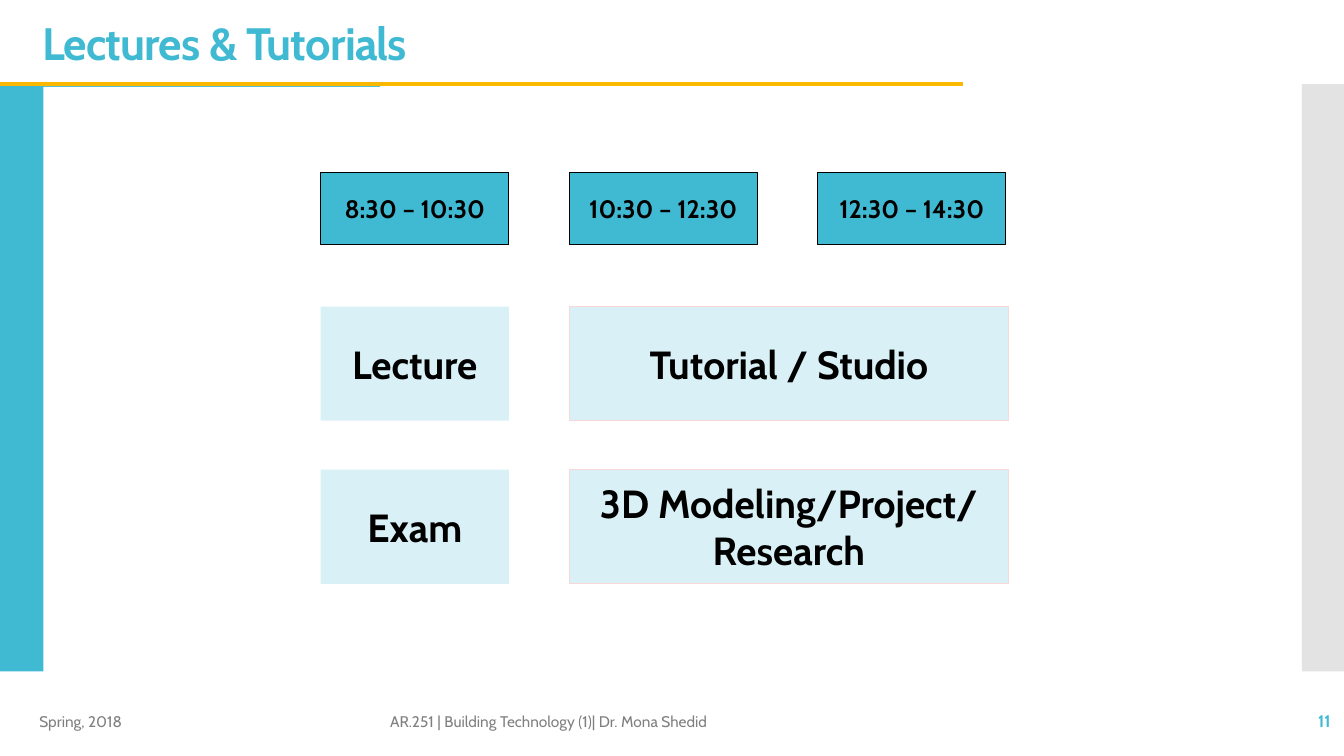
from lxml.etree import SubElement
from pptx import Presentation
from pptx.dml.color import RGBColor
from pptx.enum.shapes import MSO_CONNECTOR, MSO_SHAPE
from pptx.enum.text import MSO_ANCHOR, PP_ALIGN
from pptx.oxml.ns import qn
from pptx.util import Pt

TEAL = RGBColor(0x40, 0xBA, 0xD2)
PALE = RGBColor(0xD9, 0xF1, 0xF6)
PINK = RGBColor(0xF7, 0xD7, 0xD8)
GOLD = RGBColor(0xFA, 0xB9, 0x00)
SILVER = RGBColor(0xC8, 0xC8, 0xC8)
GREY = RGBColor(0x80, 0x80, 0x80)
BLACK = RGBColor(0, 0, 0)
WHITE = RGBColor(0xFF, 0xFF, 0xFF)

LEFT, PITCH = 229, 177.5
SLIM, WIDE = 134.5, 314
TIMES = ["8:30 – 10:30", "10:30 – 12:30", "12:30 – 14:30"]
ROWS = [
    (219, "Lecture", "Tutorial / Studio"),
    (335.5, "Exam", "3D Modeling/Project/ Research"),
]


def write(shape, text, size, color, bold=True, align=PP_ALIGN.LEFT, wrap=True):
    frame = shape.text_frame
    frame.text = text
    frame.word_wrap = wrap
    frame.vertical_anchor = MSO_ANCHOR.MIDDLE
    para = frame.paragraphs[0]
    para.alignment = align
    font = para.runs[0].font
    font.name = "Cabin"
    font.size = Pt(size)
    font.bold = bold
    font.color.rgb = color
    return para


def add_box(slide, x, y, w, h, fill, edge=None):
    box = slide.shapes.add_shape(MSO_SHAPE.RECTANGLE, Pt(x), Pt(y), Pt(w), Pt(h))
    box.shadow.inherit = False
    box.fill.solid()
    box.fill.fore_color.rgb = fill
    if edge is None:
        box.line.fill.background()
    else:
        box.line.color.rgb = edge
        box.line.width = Pt(0.75)
    return box


def add_label(slide, x, y, w, h, text, size, color, **style):
    label = slide.shapes.add_textbox(Pt(x), Pt(y), Pt(w), Pt(h))
    return write(label, text, size, color, **style)


def add_rule(slide, y, end):
    rule = slide.shapes.add_connector(MSO_CONNECTOR.STRAIGHT, 0, Pt(y), Pt(end), Pt(y))
    rule.line.color.rgb = GOLD
    rule.line.width = Pt(3)
    SubElement(rule._element.spPr, qn("a:effectLst"))


def add_frame(slide):
    add_box(slide, 0, 60, 271.5, 419.5, TEAL)
    band = add_box(slide, 930, 60, 30, 419.5, SILVER)
    color = band.fill._xPr.find(qn("a:solidFill"))[0]
    SubElement(color, qn("a:alpha"), val="50000")
    add_rule(slide, 60, 688)
    add_box(slide, 31, 62, 260.5, 419.5, WHITE)


def add_title(slide):
    para = add_label(slide, 23, 12, 318, 41, "Lectures & Tutorials", 32.4, TEAL)
    para.line_spacing = 0.9
    para.runs[0]._r.get_or_add_rPr().set("spc", "-60")


def add_footer(slide):
    top, high = 500.5, 29
    add_label(slide, 837.5, top, 120, high, "11", 12, TEAL, align=PP_ALIGN.RIGHT)
    add_label(slide, 21, top, 216, high, "Spring, 2018", 11, GREY, bold=False)
    course = "AR.251 | Building Technology (1)| Dr. Mona Shedid"
    add_label(slide, 271.5, top, 543.5, high, course, 11, GREY, bold=False)


def add_plan(slide):
    mid = PP_ALIGN.CENTER
    for col, time in enumerate(TIMES):
        box = add_box(slide, LEFT + col * PITCH, 123, SLIM, 52, TEAL, BLACK)
        write(box, time, 18, BLACK, align=mid, wrap=False)
    for top, first, second in ROWS:
        box = add_box(slide, LEFT, top, SLIM, 81.5, PALE)
        write(box, first, 28, BLACK, align=mid)
        box = add_box(slide, LEFT + PITCH, top, WIDE, 81.5, PALE, PINK)
        write(box, second, 28, BLACK, align=mid)


def main():
    deck = Presentation()
    deck.slide_width = Pt(960)
    deck.slide_height = Pt(540)
    slide = deck.slides.add_slide(deck.slide_layouts[6])
    add_frame(slide)
    add_title(slide)
    add_footer(slide)
    add_plan(slide)
    deck.save("out.pptx")


if __name__ == "__main__":
    main()
